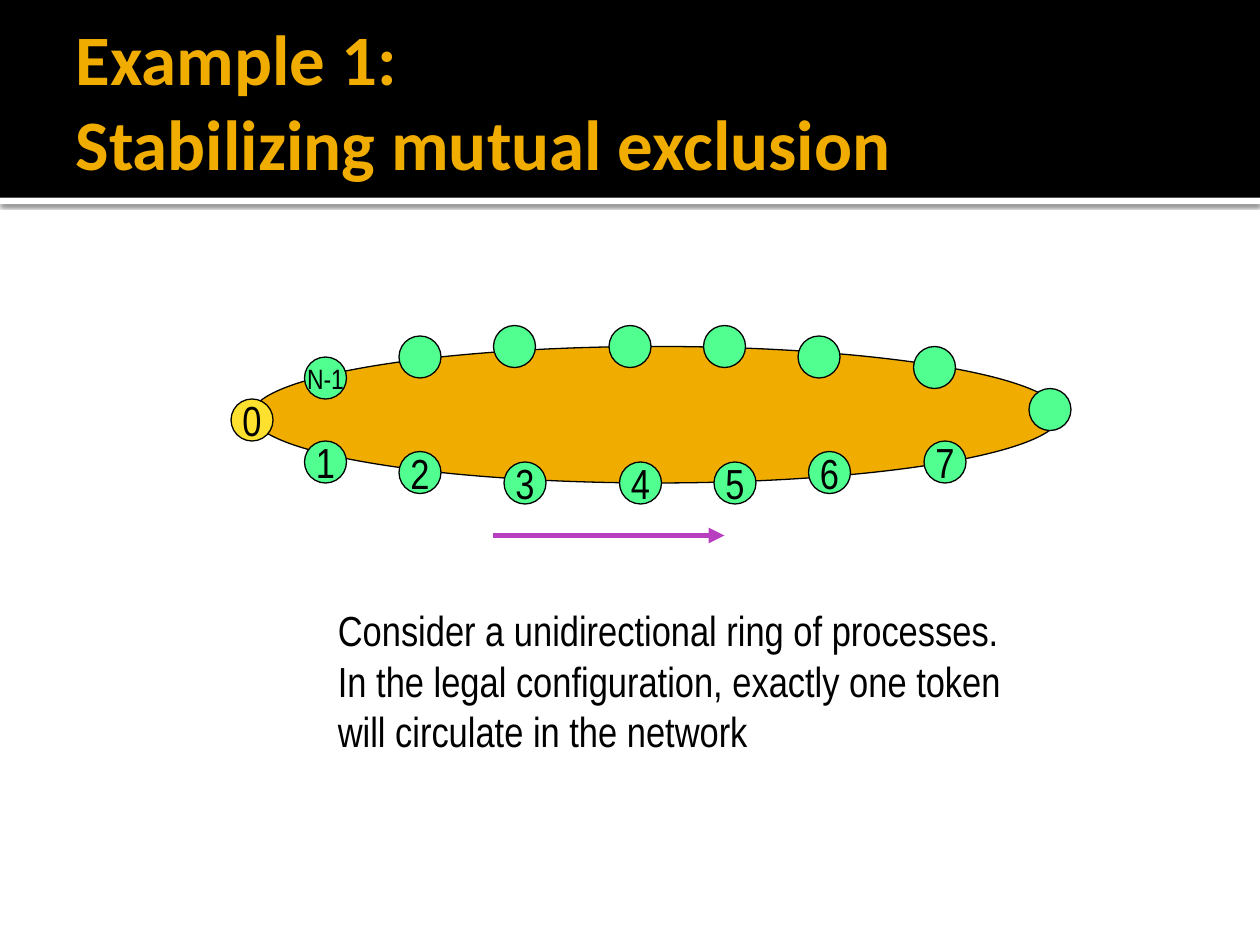
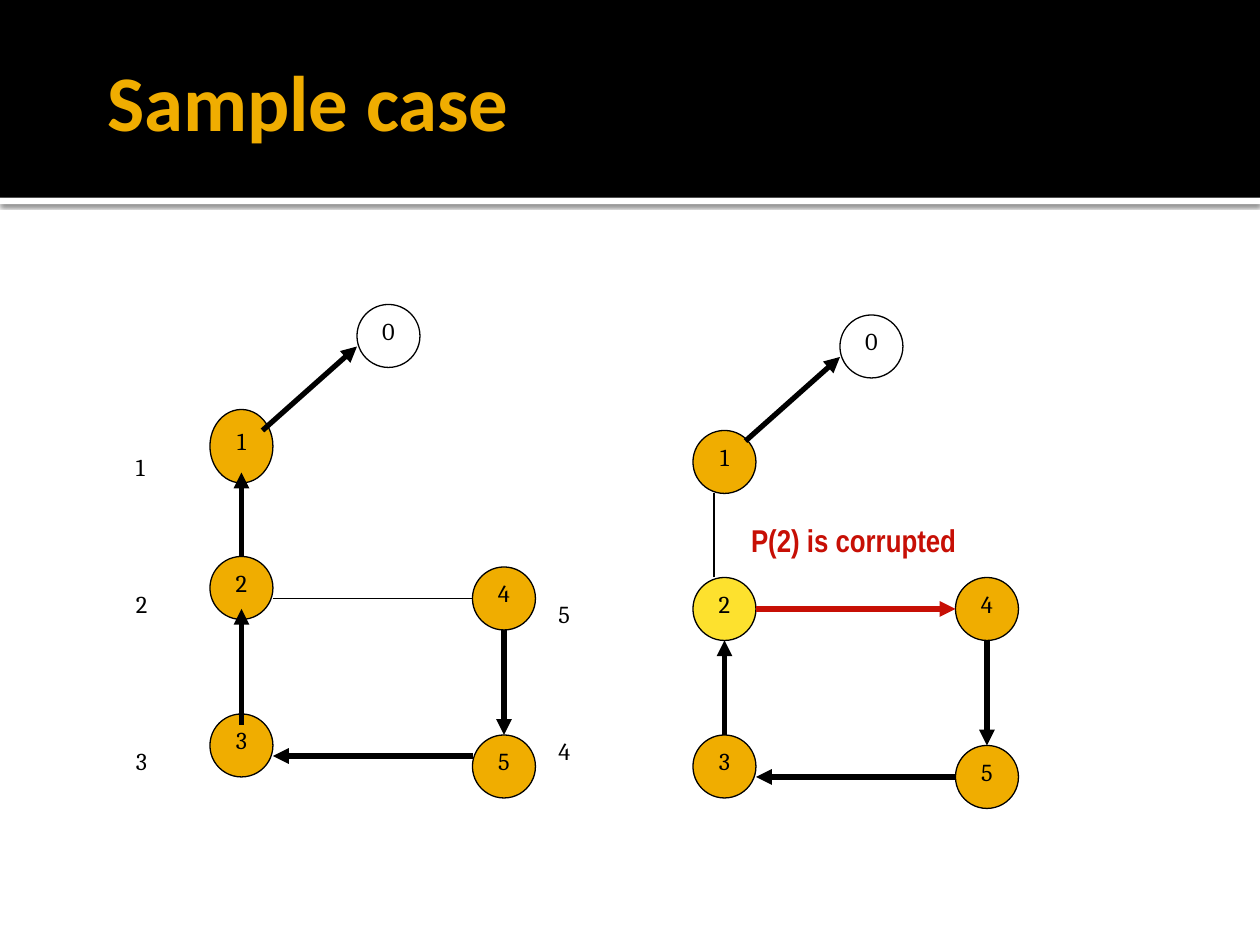
from lxml import etree
from pptx import Presentation
from pptx import util as u
from pptx.dml.color import RGBColor
from pptx.enum import shapes as sh, text as tx
from pptx.oxml.ns import qn

# Grid of 120 columns by 90 rows, 12 cells to the inch
CELL = u.Inches(1) // 12
COLS, ROWS = 120, 90
BLACK, WHITE, AMBER, YELLOW = "000000", "FFFFFF", "F0AD00", "FDE12E"
GREEN, PURPLE, RED = "51FF91", "B840C0", "C70F05"
NARROW, HEAD, SERIF = "Arial Narrow", "Calibri", "Cambria"


def grid(*cells):
    return [round(c * CELL) for c in cells]


def rgb(code):
    return RGBColor.from_string(code)


def write(frame, words, font=NARROW, size=24, color=BLACK, bold=False,
          align=tx.PP_ALIGN.LEFT, anchor=tx.MSO_ANCHOR.TOP, wrap=False, base=0):
    """Fill a frame, one paragraph per line of words; a \\v breaks a line."""
    frame.text = words
    frame.word_wrap = wrap
    frame.vertical_anchor = anchor
    for para in frame.paragraphs:
        para.alignment = align
        for run in para.runs:
            face = run.font
            face.name, face.size, face.bold = font, u.Pt(size), bold
            face.color.rgb = rgb(color)
            if base:
                run._r.get_or_add_rPr().set("baseline", str(base * 1000))


def draw(slide, kind, box, fill, line=None):
    part = slide.shapes.add_shape(kind, *grid(*box))
    part.shadow.inherit = False
    part.fill.solid()
    part.fill.fore_color.rgb = rgb(fill)
    if line:
        part.line.color.rgb = rgb(line)
        part.line.width = u.Pt(0.75)
    else:
        part.line.fill.background()
    return part


def node(slide, words, box, fill, **form):
    part = draw(slide, sh.MSO_SHAPE.OVAL, box, fill, BLACK)
    if words:
        write(part.text_frame, words, align=tx.PP_ALIGN.CENTER,
              anchor=tx.MSO_ANCHOR.MIDDLE, **form)


def label(slide, words, box, **form):
    frame = slide.shapes.add_textbox(*grid(*box)).text_frame
    write(frame, words, **form)
    frame.auto_size = tx.MSO_AUTO_SIZE.SHAPE_TO_FIT_TEXT


def link(slide, ends, color=BLACK, arrow=True):
    part = slide.shapes.add_connector(sh.MSO_CONNECTOR.STRAIGHT, *grid(*ends))
    part.line.color.rgb = rgb(color)
    part.line.width = u.Pt(3 if arrow else 0.75)
    if arrow:
        etree.SubElement(part.line._get_or_add_ln(), qn("a:tailEnd"), type="triangle")
    etree.SubElement(part._element.spPr, qn("a:effectLst"))


def band(slide):
    """Move the black band and its shaded rule onto the shared layout."""
    rule = draw(slide, sh.MSO_SHAPE.RECTANGLE, (0, 18.84, COLS, 0.6), WHITE)
    glow = etree.SubElement(rule._element.spPr.find(qn("a:effectLst")), qn("a:outerShdw"),
                            blurRad=str(u.Pt(2.5)), dist=str(u.Pt(0.8)), dir="5400000")
    tint = etree.SubElement(glow, qn("a:srgbClr"), val=BLACK)
    etree.SubElement(tint, qn("a:alpha"), val="60000")
    top = draw(slide, sh.MSO_SHAPE.RECTANGLE, (0, 0, COLS, 18.84), BLACK)
    tree = slide.slide_layout.shapes._spTree
    for spot, part in enumerate((rule, top), 2):
        tree.insert(spot, part._element)


def title(slide, words, left, wide, size):
    head = slide.shapes.title
    head.left, head.top, head.width, head.height = grid(left, 2, wide, 15)
    frame = head.text_frame
    frame.auto_size = tx.MSO_AUTO_SIZE.NONE
    frame.margin_left = u.Inches(0.1)
    frame.margin_right = frame.margin_top = frame.margin_bottom = u.Inches(0.05)
    write(frame, words, HEAD, size, AMBER, True, anchor=tx.MSO_ANCHOR.MIDDLE, wrap=True)


def ring(slide, x, y):
    """Processes around a flat ellipse, with the direction of travel."""
    draw(slide, sh.MSO_SHAPE.OVAL, (x + 2, y + 2, 77, 13), AMBER, BLACK)
    lower = [(7, 11), (16, 12), (26, 13), (37, 13), (46, 13), (55, 12), (66, 11)]
    upper = [(16, 1), (25, 0), (36, 0), (45, 0), (54, 1), (65, 2), (76, 6)]
    node(slide, "0", (x, y + 7, 4, 4), YELLOW)
    for num, (dx, dy) in enumerate(lower, 1):
        node(slide, str(num), (x + dx, y + dy, 4, 4), GREEN)
    for dx, dy in upper:
        node(slide, "", (x + dx, y + dy, 4, 4), GREEN)
    node(slide, "N-1", (x + 7, y + 3, 4, 4), GREEN, size=16)
    link(slide, (x + 25, y + 20, x + 47, y + 20), PURPLE)


def graph(slide, x, y, rows, tall, fills, links):
    """Six nodes in three columns; links are (ends, color, arrow)."""
    cols = (14, 0, 0, 0, 25, 25)
    for num, (dx, dy, fill) in enumerate(zip(cols, rows, fills)):
        high = tall if num == 1 else 6
        node(slide, str(num), (x + dx, y + dy, 6, high), fill, font=SERIF, base=30)
    shared = [((5, 12, 14, 4), BLACK, True), ((28, 31, 28, 41), BLACK, True)]
    for (ax, ay, bx, by), color, arrow in shared + links:
        link(slide, (x + ax, y + ay, x + bx, y + by), color, arrow)


def levels(slide, x, y):
    """Numbers written beside the nodes of the graph at x, y."""
    spots = [(-8.25, 13), (-8.25, 26), (-8.25, 41), (32, 40), (32, 27)]
    for num, (dx, dy) in enumerate(spots, 1):
        label(slide, str(num), (x + dx, y + dy, 3.7, 4.4), font=SERIF, base=30)


def main():
    deck = Presentation()
    deck.slide_width, deck.slide_height = grid(COLS, ROWS)
    plain = deck.slide_layouts[5]

    # Ring of processes
    first = deck.slides.add_slide(plain)
    band(first)
    title(first, "Example 1: \vStabilizing mutual exclusion", 6, 111, 40.5)
    ring(first, 22, 31)
    label(first, "Consider a unidirectional ring of processes.\n"
                 "In the legal configuration, exactly one token\n"
                 "will circulate in the network", (31, 57, 66.2, 15.6))

    # Legal and corrupted trees
    case = deck.slides.add_slide(plain)
    title(case, "Sample case", 9, 102, 45)
    graph(case, 20, 29, (0, 10, 24, 39, 25, 41), 7, [WHITE] + [AMBER] * 5, [
        ((3, 40, 3, 29), BLACK, True),
        ((3, 24, 3, 16), BLACK, True),
        ((25, 43, 6, 43), BLACK, True),
        ((6, 28, 25, 28), BLACK, False)])
    levels(case, 20, 29)
    graph(case, 66, 30, (0, 11, 25, 40, 25, 41), 6,
          [WHITE, AMBER, YELLOW] + [AMBER] * 3, [
              ((3, 40, 3, 31), BLACK, True),
              ((25, 44, 6, 44), BLACK, True),
              ((6, 28, 25, 28), RED, True),
              ((2, 25, 2, 17), BLACK, False)])
    label(case, "P(2) is corrupted", (70.3, 49, 22, 4.8), size=18, color=RED,
          bold=True, align=tx.PP_ALIGN.CENTER)

    deck.save("out.pptx")


if __name__ == "__main__":
    main()
